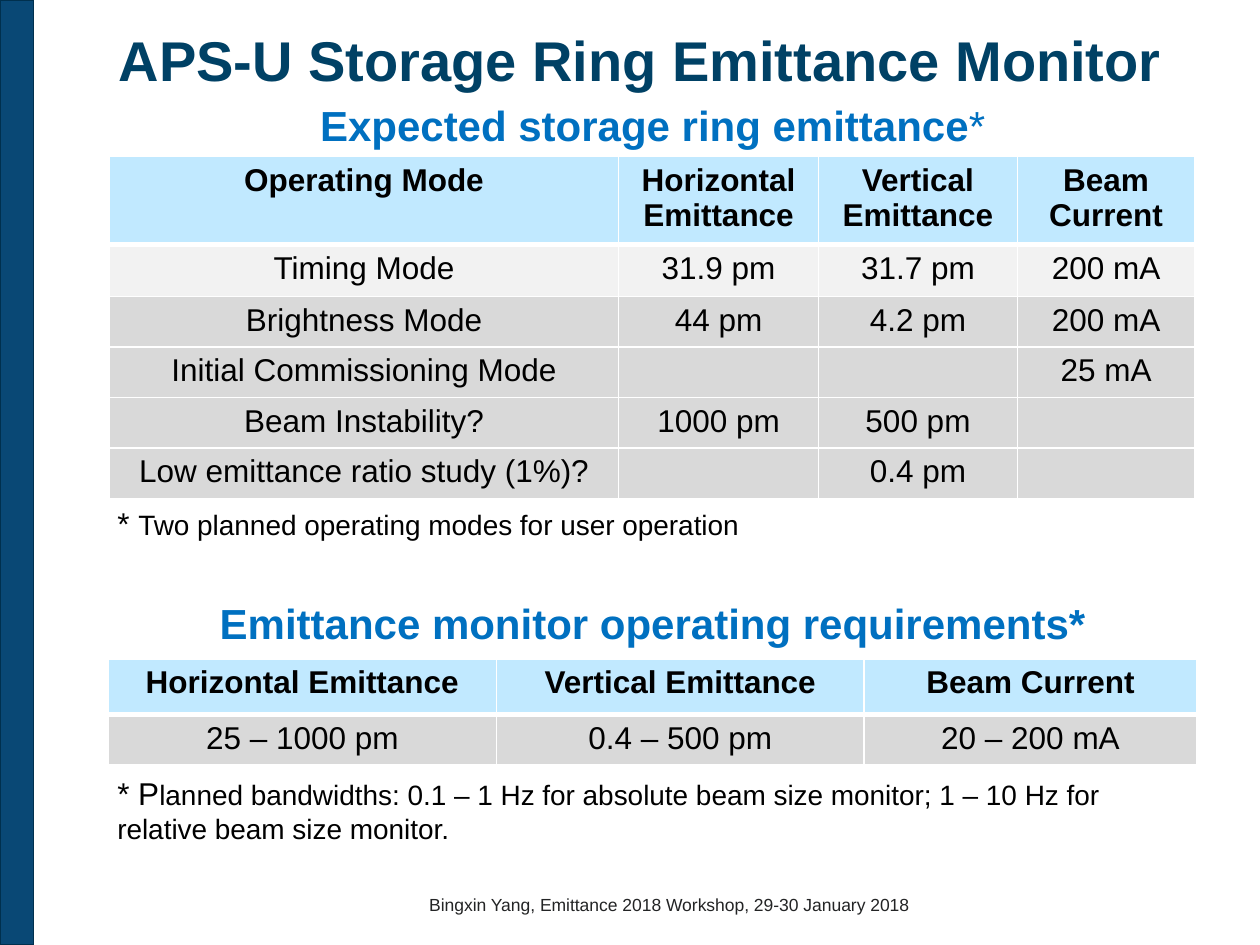
import pptx
import pptx.dml.color
import pptx.enum.shapes
import pptx.enum.text
import pptx.oxml
import pptx.oxml.ns
import pptx.util

Pt = pptx.util.Pt
RGB = pptx.dml.color.RGBColor
ALIGN = pptx.enum.text.PP_ALIGN
ANCHOR = pptx.enum.text.MSO_ANCHOR

BAR = RGB(0x09, 0x48, 0x75)
EDGE = RGB(0x00, 0x30, 0x4E)
NAVY = RGB(0x00, 0x41, 0x65)
BLUE = RGB(0x00, 0x70, 0xC0)
BLACK = RGB(0, 0, 0)
GREY = RGB(0x23, 0x24, 0x25)
HEAD = RGB(0xC1, 0xE9, 0xFF)
PALE = RGB(0xF2, 0xF2, 0xF2)
DULL = RGB(0xD9, 0xD9, 0xD9)


def style(run, size, color, bold=False):
    run.font.name = "Arial"
    run.font.size = Pt(size)
    run.font.bold = bold
    run.font.color.rgb = color


def add_text(slide, box, parts, color, align=ALIGN.CENTER, anchor=ANCHOR.TOP):
    """Place one paragraph; parts are (text, size, bold)."""
    frame = slide.shapes.add_textbox(*map(Pt, box)).text_frame
    frame.word_wrap = True
    frame.vertical_anchor = anchor
    frame.margin_left = frame.margin_right = 0
    frame.margin_top = frame.margin_bottom = 0
    para = frame.paragraphs[0]
    para.alignment = align
    for text, size, bold in parts:
        run = para.add_run()
        run.text = text
        style(run, size, color, bold)


def add_edges(cell, top, base):
    """Draw white cell borders; top and base are line widths in points."""
    props = cell._tc.get_or_add_tcPr()
    space = pptx.oxml.ns.nsdecls("a")
    widths = (("lnL", 1), ("lnR", 1), ("lnT", top), ("lnB", base))
    for spot, (tag, width) in enumerate(widths):
        props.insert(spot, pptx.oxml.parse_xml(
            f'<a:{tag} {space} w="{Pt(width)}"><a:solidFill>'
            f'<a:srgbClr val="FFFFFF"/></a:solidFill></a:{tag}>'))


def add_grid(slide, left, top, widths, heights, rows, fills):
    """Place a table with a bold first row."""
    shape = slide.shapes.add_table(len(rows), len(widths), Pt(left), Pt(top),
                                   Pt(sum(widths)), Pt(sum(heights)))
    table = shape.table
    for column, width in zip(table.columns, widths):
        column.width = Pt(width)
    for r, row in enumerate(rows):
        table.rows[r].height = Pt(heights[r])
        for c, text in enumerate(row):
            cell = table.cell(r, c)
            cell.fill.solid()
            cell.fill.fore_color.rgb = fills[r]
            add_edges(cell, 3 if r == 1 else 1, 3 if r == 0 else 1)
            cell.text_frame.text = text
            for para in cell.text_frame.paragraphs:
                para.alignment = ALIGN.CENTER
                for run in para.runs:
                    style(run, 18, BLACK, r == 0)


def add_frame(slide, width, height):
    """Place the side bar, title and footer."""
    bar = slide.shapes.add_shape(pptx.enum.shapes.MSO_SHAPE.RECTANGLE,
                                 0, 0, Pt(19.4), Pt(height))
    bar.shadow.inherit = False
    bar.fill.solid()
    bar.fill.fore_color.rgb = BAR
    bar.line.color.rgb = EDGE
    bar.line.width = Pt(0.75)
    add_text(slide, (36, 14.4, 660, 55),
             [("APS-U Storage Ring Emittance Monitor", 32, True)], NAVY)
    add_text(slide, (113.8, 508.3, 537, 17.3),
             [("Bingxin Yang, Emittance 2018 Workshop, 29-30 January 2018",
               10, False)], GREY, anchor=ANCHOR.MIDDLE)


def add_part(slide, box, title, grid, note):
    """Place a heading, its table and the footnote below it."""
    left, top, width, height = box
    add_text(slide, (left, top, width, 36), title, BLUE)
    add_grid(slide, *grid)
    add_text(slide, (left + 23.8, top + height, 611, 36), note, BLACK,
             ALIGN.LEFT)


def main():
    deck = pptx.Presentation()
    deck.slide_width, deck.slide_height = Pt(720), Pt(540)
    slide = deck.slides.add_slide(deck.slide_layouts[6])
    add_frame(slide, 720, 540)

    # Expected emittance
    modes = [
        ("Operating Mode", "Horizontal\nEmittance", "Vertical\nEmittance",
         "Beam Current"),
        ("Timing Mode", "31.9 pm", "31.7 pm", "200 mA"),
        ("Brightness Mode", "44 pm", "4.2 pm", "200 mA"),
        ("Initial Commissioning Mode", "", "", "25 mA"),
        ("Beam Instability?", "1000 pm", "500 pm", ""),
        ("Low emittance ratio study (1%)?", "", "0.4 pm", ""),
    ]
    add_part(slide, (43.2, 56.9, 659.5, 231.1),
             [("Expected storage ring emittance", 24, True),
              ("*", 24, False)],
             (62.6, 89.3, (290.9, 114.3, 113.6, 101.4),
              [50, 29.7] + [27.4] * 4, modes, [HEAD, PALE] + [DULL] * 4),
             [("* ", 18, False),
              ("Two planned operating modes for user operation", 16, False)])

    # Monitor requirements
    needs = [
        ("Horizontal Emittance", "Vertical Emittance", "Beam Current"),
        ("25 – 1000 pm", "0.4 – 500 pm", "20 – 200 mA"),
    ]
    add_part(slide, (43.2, 341.3, 659.5, 100.8),
             [("Emittance monitor operating requirements*", 24, True)],
             (62, 376.6, (221.6, 210.3, 190), (31.6, 27.4), needs,
              (HEAD, DULL)),
             [("* P", 18, False),
              ("lanned bandwidths: 0.1 – 1 Hz for absolute beam size monitor; "
               "1 – 10 Hz for relative beam size monitor.", 16, False)])

    deck.save("out.pptx")


if __name__ == "__main__":
    main()
